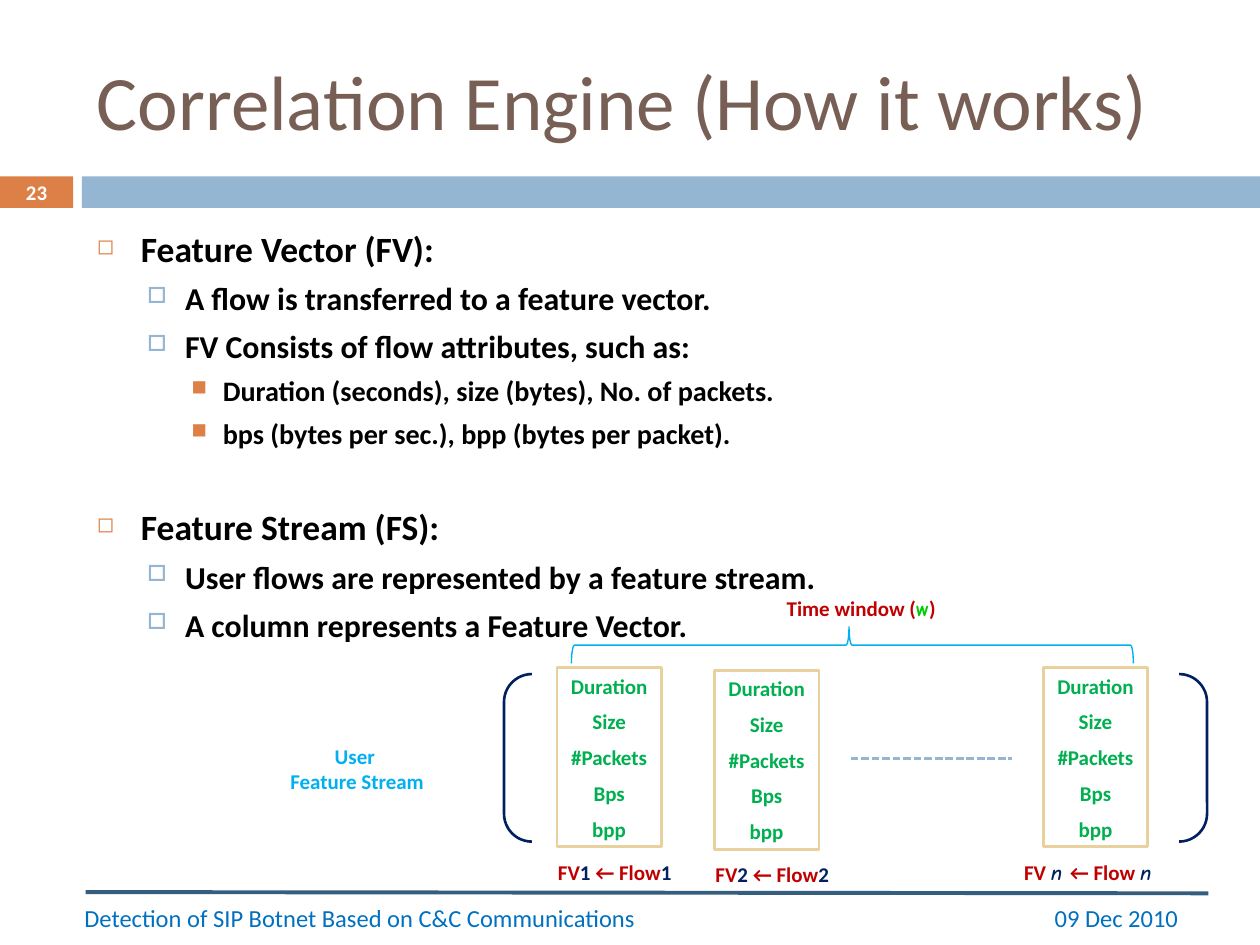
from lxml import etree
from pptx import Presentation
from pptx import util as u
from pptx.dml import color
from pptx.enum import dml, shapes, text
from pptx.oxml import ns

HUES = {
    "orange": "DD8047", "blue": "94B6D2", "rule": "355D7E", "brown": "775F55",
    "foot": "0070C0", "white": "FFFFFF", "black": "000000", "navy": "002060",
    "sand": "E8D19D", "green": "00B050", "red": "C00000", "sky": "00B0F0",
    "lime": "00CC00",
}
FONT, SCRIPT = "Calibri", "Comic Neue"
KIND = shapes.MSO_SHAPE
MID = text.MSO_ANCHOR.MIDDLE
CENTER = text.PP_ALIGN.CENTER

# Per level: size, space before, left margin, hanging indent, bullet, hue, percent
LEVELS = [
    (20.3, 7, 0.35, 0.35, "◻", "orange", 60),
    (18.2, 5.5, 0.7, 0.3, "□", "blue", 70),
    (16.1, 5, 1, 0.25, "■", "orange", 75),
]
POINTS = [
    (0, "Feature Vector (FV):"),
    (1, "A flow is transferred to a feature vector."),
    (1, "FV Consists of flow attributes, such as:"),
    (2, "Duration (seconds), size (bytes), No. of packets."),
    (2, "bps (bytes per sec.), bpp (bytes per packet)."),
    (0, "Feature Stream (FS):"),
    (1, "User flows are represented by a feature stream."),
    (1, "A column represents a Feature Vector."),
]
FIELDS = ["Duration", "Size", "#Packets", "Bps", "bpp"]


def rgb(hue):
    return color.RGBColor.from_string(HUES[hue])


def place(box):
    return [u.Inches(n) for n in box]


def write(frame, lines, size=12, hue="black", bold=True, align=None,
          anchor=text.MSO_ANCHOR.TOP, gap=0, inset=None):
    """Fill a frame; a line is a string or a list of (string, hue, font, italic)."""
    frame.word_wrap = True
    frame.vertical_anchor = anchor
    if inset is not None:
        frame.margin_left = u.Inches(inset)
    for i, line in enumerate(lines):
        para = frame.paragraphs[0] if i == 0 else frame.add_paragraph()
        para.alignment = align
        para.space_before = u.Pt(gap if i else 0)
        parts = [(line, hue, FONT, False)] if isinstance(line, str) else line
        for words, tint, face, slant in parts:
            run = para.add_run()
            run.text = words
            font = run.font
            font.name, font.size = face, u.Pt(size)
            font.bold, font.italic = bold, slant
            font.color.rgb = rgb(tint)
    return frame


def label(slide, box, lines, **form):
    return write(slide.shapes.add_textbox(*place(box)).text_frame, lines, **form)


def draw(slide, kind, box, fill=None, line=None, width=1.5):
    shape = slide.shapes.add_shape(kind, *place(box))
    shape.shadow.inherit = False
    if fill:
        shape.fill.solid()
        shape.fill.fore_color.rgb = rgb(fill)
    else:
        shape.fill.background()
    if line:
        shape.line.color.rgb = rgb(line)
        shape.line.width = u.Pt(width)
    else:
        shape.line.fill.background()
    return shape


def rule(slide, start, end, hue, width):
    line = slide.shapes.add_connector(
        shapes.MSO_CONNECTOR.STRAIGHT, *place(start + end))
    line.line.color.rgb = rgb(hue)
    line.line.width = u.Pt(width)
    etree.SubElement(line._element.spPr, ns.qn("a:effectLst"))
    return line


def bullet(para, level, extra=0):
    size, before, left, hang, mark, hue, part = LEVELS[level]
    para.level = level
    para.space_before = u.Pt(before + extra)
    props = para._p.get_or_add_pPr()
    props.set("marL", str(u.Inches(left)))
    props.set("indent", str(-u.Inches(hang)))
    tint = etree.SubElement(props, ns.qn("a:buClr"))
    etree.SubElement(tint, ns.qn("a:srgbClr"), val=HUES[hue])
    etree.SubElement(props, ns.qn("a:buSzPct"), val=str(part * 1000))
    etree.SubElement(props, ns.qn("a:buChar"), char=mark)
    for run in para.runs:
        run.font.size = u.Pt(size)


def header(slide, box):
    left, top, width, height = box
    band = top + 1.4
    draw(slide, KIND.RECTANGLE, (left, band, 0.58, 0.25), fill="orange")
    draw(slide, KIND.RECTANGLE, (left + 0.65, band, width - 0.65, 0.25), fill="blue")
    label(slide, (left + 0.67, top + 0.25, 8.92, 1.08),
          ["Correlation Engine (How it works)"],
          size=44, hue="brown", bold=False, anchor=MID)
    label(slide, (left, band - 0.01, 0.58, 0.27), ["23"],
          size=11.9, hue="white", align=CENTER, anchor=MID)


def footer(slide, box):
    left, top, width, height = box
    rule(slide, (left + 0.01, top), (left + width, top + 0.01), "rule", 2.25)
    form = dict(size=14, hue="foot", bold=False, anchor=MID)
    label(slide, (left, top, 5.93, height),
          ["Detection of SIP Botnet Based on C&C Communications"], inset=0, **form)
    label(slide, (left + 6, top, width - 6, height), ["09 Dec 2010"],
          inset=1.7, **form)


def body(slide, box):
    frame = label(slide, box, [words for _, words in POINTS])
    for i, (para, (level, _)) in enumerate(zip(frame.paragraphs, POINTS)):
        new = i > 0 and level == 0
        bullet(para, level, extra=24.6 if new else 0)


def column(slide, box, name, shift, span):
    """One feature vector with its caption below."""
    left, top, width, height = box
    cell = draw(slide, KIND.RECTANGLE, box, line="sand")
    write(cell.text_frame, FIELDS, hue="green", align=CENTER, anchor=MID, gap=6)
    label(slide, (left - shift, top + height + 0.05, span, 0.3), [name])


def plain(num):
    return [("FV", "red", FONT, False), (num + " ", "navy", FONT, False),
            ("← Flow", "red", FONT, False), (num, "navy", FONT, False)]


def stream(slide, box):
    left, top, width, height = box
    draw(slide, KIND.DOUBLE_BRACKET,
         (left + 1.83, top + 0.67, width - 1.83, 1.33), line="navy")
    last = [("FV ", "red", FONT, False), ("n ", "navy", SCRIPT, True),
            ("← Flow ", "red", FONT, False), ("n", "navy", SCRIPT, True)]
    for x, y, name, shift, span in [
            (2.25, 0.62, plain("1"), 0.09, 1.17),
            (3.5, 0.64, plain("2"), 0.09, 1.17),
            (6.11, 0.62, last, 0.25, 1.3)]:
        column(slide, (left + x, top + y, 0.83, 1.42), name, shift, span)
    dash = rule(slide, (left + 4.58, top + 1.34), (left + 5.86, top + 1.34),
                "blue", 1.5)
    dash.line.dash_style = dml.MSO_LINE.SQUARE_DOT
    brace = draw(slide, KIND.LEFT_BRACE, (left + 4.45, top - 1.79, 0.29, 4.46),
                 line="sky", width=0.79)
    brace.rotation = 90
    brace.adjustments[0], brace.adjustments[1] = 0.083, 0.506
    label(slide, (left + 3.33, top, 2.67, 0.3),
          [[("Time window (", "red", FONT, False), ("w", "lime", SCRIPT, False),
            (")", "red", FONT, False)]], align=CENTER)
    label(slide, (left, top + 1.17, 1.33, 0.5), ["User ", "Feature Stream"],
          hue="sky", align=CENTER)


def main():
    deck = Presentation()
    deck.slide_width, deck.slide_height = u.Inches(10), u.Inches(7.5)
    slide = deck.slides.add_slide(deck.slide_layouts[6])
    header(slide, (0, 0, 10, 1.65))
    footer(slide, (0.67, 7.08, 8.92, 0.4))
    body(slide, (0.67, 1.75, 8.92, 2.92))
    stream(slide, (2.17, 4.68, 7.41, 2.4))
    deck.save("out.pptx")


if __name__ == "__main__":
    main()
